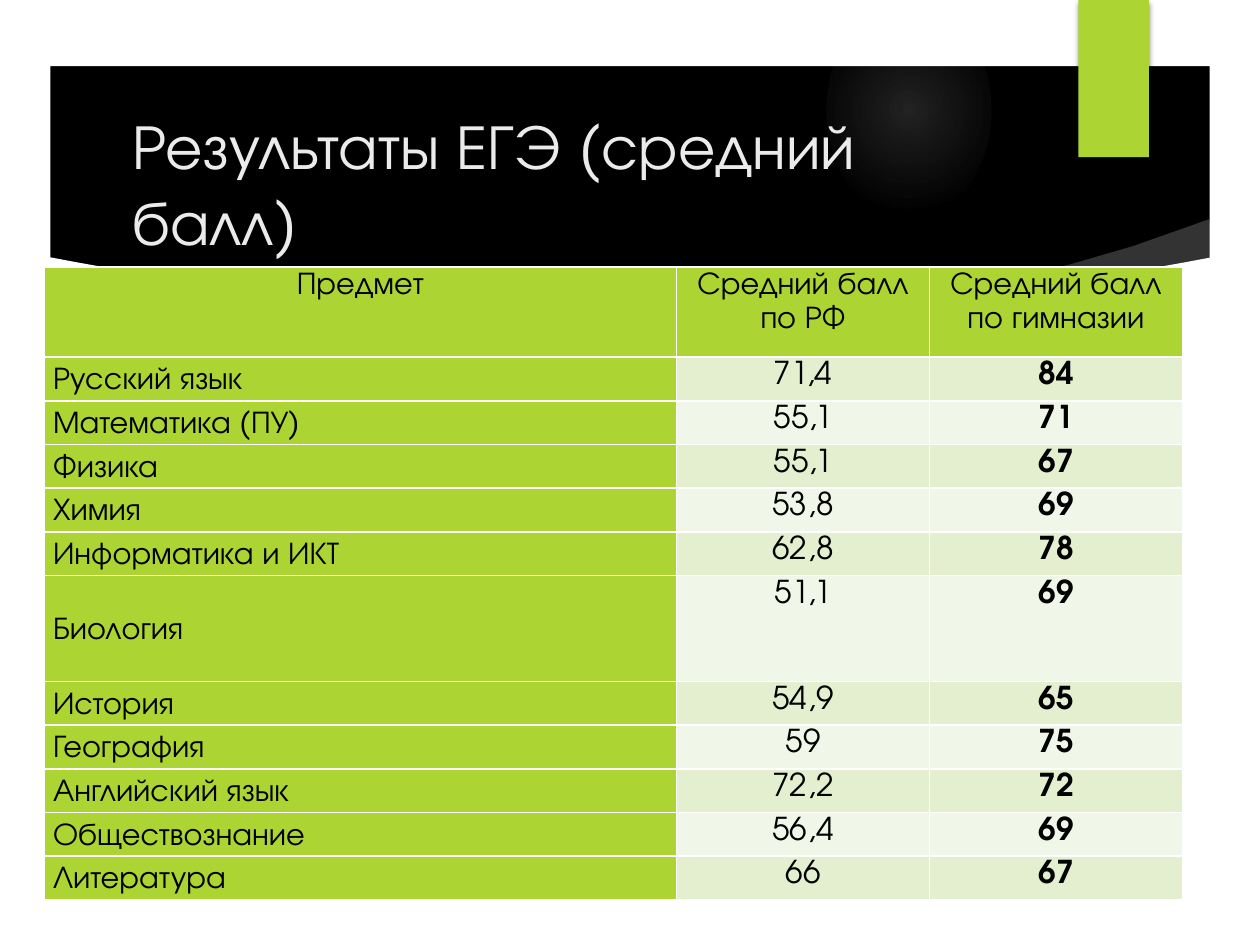
from collections import namedtuple

from lxml.etree import SubElement
from pptx import Presentation
from pptx.dml.color import RGBColor
from pptx.enum.shapes import MSO_SHAPE as Preset
from pptx.enum.text import MSO_ANCHOR as Anchor, MSO_AUTO_SIZE as AutoSize, PP_ALIGN as Align
from pptx.oxml import parse_xml
from pptx.oxml.ns import nsdecls, qn
from pptx.util import Cm, Pt

Box = namedtuple("Box", "left top width height")

FONT = "TeX Gyre Adventor"
BLACK = RGBColor(0x00, 0x00, 0x00)
WHITE = RGBColor(0xFF, 0xFF, 0xFF)
LIME = RGBColor(0xAC, 0xD4, 0x33)
PALE_BANDS = (RGBColor(0xE3, 0xEF, 0xCE), RGBColor(0xF1, 0xF7, 0xE8))
TITLE_GREY = RGBColor(0xEB, 0xEB, 0xEB)
GLOW = RGBColor(0xF7, 0xF7, 0xF7)

TITLE = "Результаты ЕГЭ (средний балл)"
HEADER = ("Предмет", "Средний балл по РФ", "Средний балл по гимназии")
RESULTS = (
    ("Русский язык", "71,4", "84"),
    ("Математика (ПУ)", "55,1", "71"),
    ("Физика", "55,1", "67"),
    ("Химия", "53,8", "69"),
    ("Информатика и ИКТ", "62,8", "78"),
    ("Биология", "51,1", "69"),
    ("История", "54,9", "65"),
    ("География", "59", "75"),
    ("Английский язык", "72,2", "72"),
    ("Обществознание", "56,4", "69"),
    ("Литература", "66", "67"),
)
HEADER_HEIGHT, ROW_HEIGHT, TALL_ROW_HEIGHT = 1.82, 0.88, 2.14
TALL_SUBJECT = "Биология"
COLUMN_SHARES = (5, 2, 2)


def write(frame, text, size=18, color=BLACK, bold=False, align=Align.LEFT, spacing=None):
    """Put one formatted paragraph into a text frame."""
    para = frame.paragraphs[0]
    para.alignment = align
    para.line_spacing = spacing
    span = para.add_run()
    span.text = text
    span.font.name = FONT
    span.font.size = Pt(size)
    span.font.bold = bold
    span.font.color.rgb = color


def paint(shape, color):
    """Give a shape a plain fill with no line or shadow."""
    shape.shadow.inherit = False
    shape.fill.solid()
    shape.fill.fore_color.rgb = color
    shape.line.fill.background()


def add_outline(page, box, color, *contours):
    """Draw closed contours given as fractions of the box."""
    placed = [
        [(Cm(box.left + x * box.width), Cm(box.top + y * box.height)) for x, y in contour]
        for contour in contours
    ]
    builder = page.shapes.build_freeform(*placed[0][0])
    for number, points in enumerate(placed):
        if number:
            builder.move_to(*points[0])
        builder.add_line_segments(points[1:], close=True)
    shape = builder.convert_to_shape()
    paint(shape, color)
    return shape


def add_glow(page, box):
    """Draw a soft round highlight that fades outwards."""
    shape = page.shapes.add_shape(Preset.OVAL, *map(Cm, box))
    paint(shape, GLOW)
    stops = "".join(
        f'<a:gs pos="{place}000"><a:srgbClr val="{GLOW}"><a:alpha val="{alpha}000"/></a:srgbClr></a:gs>'
        for place, alpha in ((0, 14), (36, 7), (73, 0))
    )
    gradient = parse_xml(
        f'<a:gradFill {nsdecls("a")}><a:gsLst>{stops}</a:gsLst><a:path path="circle">'
        '<a:fillToRect l="50000" t="50000" r="50000" b="50000"/></a:path></a:gradFill>'
    )
    solid = shape.element.spPr.find(qn("a:solidFill"))
    solid.getparent().replace(solid, gradient)


def add_swoosh(page, box):
    """Draw the translucent sweep at the right of the banner."""
    upper = [(0, 0.91), (0.16, 0.82), (0.37, 0.69), (0.56, 0.53), (0.75, 0.31), (0.97, 0)]
    lower = [(1, 0.71), (0.76, 0.85), (0.48, 0.94), (0.2, 1), (0.01, 1)]
    shape = add_outline(page, box, WHITE, upper + lower)
    color = shape.element.spPr.find(qn("a:solidFill"))[0]
    SubElement(color, qn("a:alpha")).set("val", "20000")


def add_panel(page, box, sag=0.09, steps=40):
    """Draw the white sheet whose top edge sags in a parabola."""
    edge = [(n / steps, sag * (1 - (2 * n / steps - 1) ** 2)) for n in range(steps + 1)]
    add_outline(page, box, WHITE, edge + [(1, 1), (0, 1)])


def add_frame(page, box, side=0.04, end=0.07):
    """Draw the white border around the page."""
    outer = [(0, 0), (0, 1), (1, 1), (1, 0)]
    inner = [(side, end), (1 - side, end), (1 - side, 1 - end), (side, 1 - end)]
    add_outline(page, box, WHITE, outer, inner)


def add_ribbon(page, box):
    """Draw the lime tab with its soft shadow."""
    shape = page.shapes.add_shape(Preset.RECTANGLE, *map(Cm, box))
    paint(shape, LIME)
    effects = shape.element.spPr.find(qn("a:effectLst"))
    effects.append(parse_xml(
        f'<a:outerShdw {nsdecls("a")} blurRad="{Pt(3)}" dist="{Pt(2)}" dir="5400000" rotWithShape="0">'
        f'<a:srgbClr val="{BLACK}"><a:alpha val="45000"/></a:srgbClr></a:outerShdw>'
    ))


def add_title(page, box):
    """Place the title placeholder above the decoration."""
    title = page.shapes.title
    title.left, title.top, title.width, title.height = map(Cm, box)
    title.element.getparent().append(title.element)
    frame = title.text_frame
    frame.word_wrap = True
    frame.auto_size = AutoSize.NONE
    frame.vertical_anchor = Anchor.MIDDLE
    write(frame, TITLE, size=36, color=TITLE_GREY)


def add_borders(cell):
    """Give a cell thin white borders."""
    properties = cell._tc.get_or_add_tcPr()
    for place, side in enumerate(("lnL", "lnR", "lnT", "lnB")):
        properties.insert(place, parse_xml(
            f'<a:{side} {nsdecls("a")} w="{Pt(1)}"><a:solidFill>'
            f'<a:srgbClr val="{WHITE}"/></a:solidFill></a:{side}>'
        ))


def add_results(page, box):
    """Build the table of average exam scores."""
    rows = (HEADER, *RESULTS)
    table = page.shapes.add_table(len(rows), len(HEADER), *map(Cm, box)).table
    for column, share in zip(table.columns, COLUMN_SHARES):
        column.width = Cm(round(box.width * share / sum(COLUMN_SHARES), 2))
    for r, texts in enumerate(rows):
        normal = TALL_ROW_HEIGHT if texts[0] == TALL_SUBJECT else ROW_HEIGHT
        table.rows[r].height = Cm(normal if r else HEADER_HEIGHT)
        for c, text in enumerate(texts):
            cell = table.cell(r, c)
            subject = r > 0 and c == 0
            cell.margin_left = cell.margin_right = Cm(0.18)
            cell.margin_top = cell.margin_bottom = 0
            cell.vertical_anchor = Anchor.MIDDLE if subject else Anchor.TOP
            cell.fill.solid()
            cell.fill.fore_color.rgb = PALE_BANDS[(r - 1) % 2] if r and c else LIME
            add_borders(cell)
            write(cell.text_frame, text, bold=r > 0 and c == 2, spacing=1.15,
                  align=Align.LEFT if subject else Align.CENTER)


def main():
    """Build and save the deck."""
    deck = Presentation()
    deck.slide_width, deck.slide_height = Cm(25.4), Cm(19.05)
    page = deck.slides.add_slide(deck.slide_layouts[5])
    page.background.fill.solid()
    page.background.fill.fore_color.rgb = BLACK
    add_glow(page, Box(16.66, 0, 3.33, 4.45))
    add_swoosh(page, Box(17.7, 4.42, 6.88, 1.73))
    add_panel(page, Box(0.97, 5.18, 23.5, 12.6))
    add_frame(page, Box(0, 0, 25.4, 19.05))
    add_ribbon(page, Box(21.74, 0, 1.42, 3.17))
    add_title(page, Box(2.41, 2.69, 18.26, 1.96))
    add_results(page, Box(0.89, 5.38, 22.95, 12.76))
    deck.save("out.pptx")


if __name__ == "__main__":
    main()
